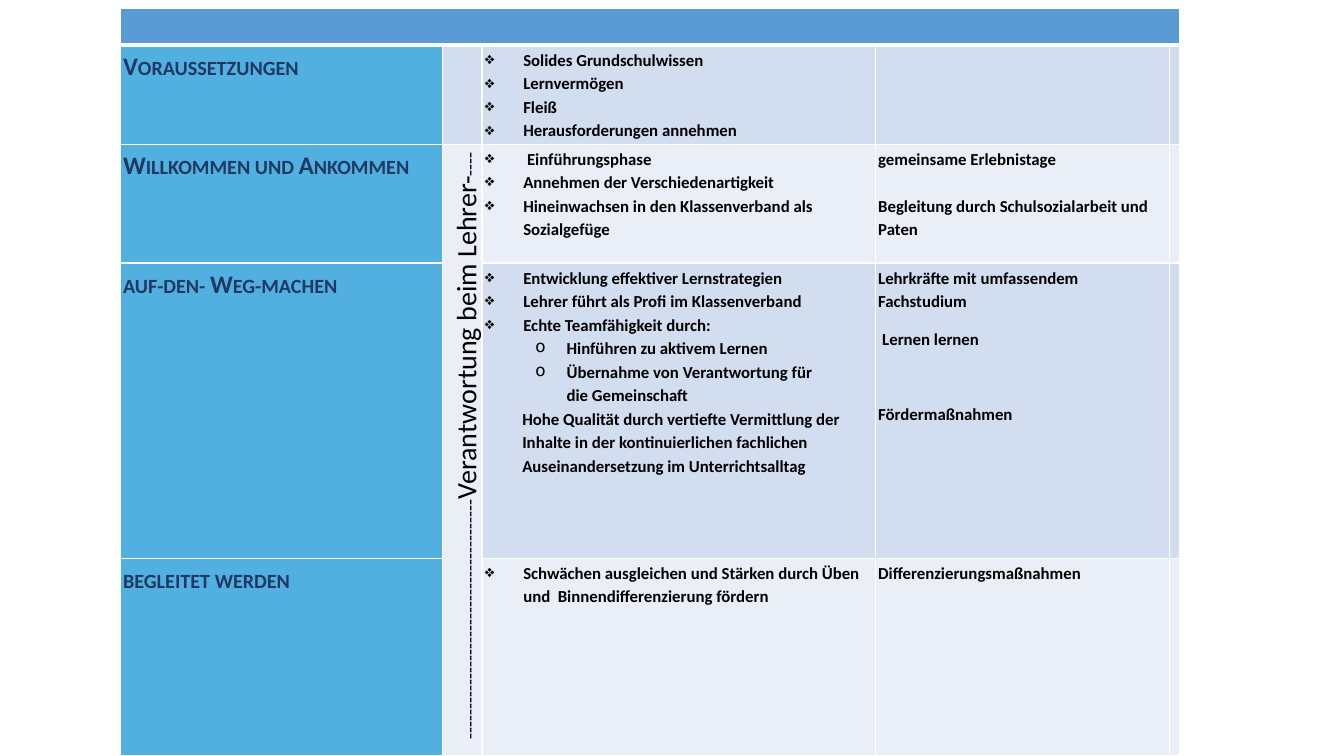
from dataclasses import dataclass

from lxml import etree
from pptx import Presentation
from pptx.dml.color import RGBColor
from pptx.enum.text import MSO_ANCHOR, PP_ALIGN
from pptx.oxml.ns import qn
from pptx.table import Table, _Cell
from pptx.text.text import TextFrame, _Paragraph
from pptx.util import Inches, Pt

BOTTOM = MSO_ANCHOR.BOTTOM
CENTER = PP_ALIGN.CENTER


@dataclass(frozen=True)
class Theme:
    """Colours, font and type sizes of the slide."""

    font: str = "Calibri"
    header: str = "5B9BD5"
    stage: str = "51B0DF"
    bands: tuple[str, str] = ("EAEFF7", "D2DEEF")
    border: str = "FFFFFF"
    heading: str = "203864"
    text: str = "000000"
    heading_size: int = 18
    body_size: int = 12
    dash_size: int = 14
    axis_size: int = 20


@dataclass(frozen=True)
class Line:
    """One paragraph of a table cell."""

    text: str
    bullet: str = ""
    indent: float = 0
    hanging: float = 0
    level: int = 0
    after: float = 10


@dataclass(frozen=True)
class Stage:
    """One row: its heading, the teaching goals and the measures."""

    heading: str
    goals: tuple[Line, ...]
    measures: tuple[Line, ...] = ()


def goal(text: str) -> Line:
    """Return a goal with a diamond bullet."""
    return Line(text, "❖", 0.38, 0.38, after=0)


def subgoal(text: str) -> Line:
    """Return a second-level goal."""
    return Line(text, "o", 0.81, 0.31, 1, 0)


THEME = Theme()
COLUMN_WIDTHS = (3.2, 0.39, 3.9, 2.92, 0.09)
ROW_HEIGHTS = (0.37, 0.98, 1.18, 2.93, 1.96)
STAGES = (
    Stage(
        "Voraussetzungen",
        (
            goal("Solides Grundschulwissen"),
            goal("Lernvermögen"),
            goal("Fleiß"),
            goal("Herausforderungen annehmen"),
        ),
    ),
    Stage(
        "Willkommen und Ankommen",
        (
            goal(" Einführungsphase"),
            goal("Annehmen der Verschiedenartigkeit"),
            goal("Hineinwachsen in den Klassenverband als Sozialgefüge"),
        ),
        (
            Line("gemeinsame Erlebnistage", after=16.8),
            Line("Begleitung durch Schulsozialarbeit und Paten"),
        ),
    ),
    Stage(
        "auf-den- Weg-machen",
        (
            goal("Entwicklung effektiver Lernstrategien"),
            goal("Lehrer führt als Profi im Klassenverband"),
            goal("Echte Teamfähigkeit durch:"),
            subgoal("Hinführen zu aktivem Lernen"),
            subgoal("Übernahme von Verantwortung für \ndie Gemeinschaft"),
            Line(
                "Hohe Qualität durch vertiefte Vermittlung der\n"
                "Inhalte in der kontinuierlichen fachlichen\n"
                "Auseinandersetzung im Unterrichtsalltag",
                indent=0.37,
            ),
        ),
        (
            Line("Lehrkräfte mit umfassendem Fachstudium"),
            Line("Lernen lernen", indent=0.04, after=36.8),
            Line("Fördermaßnahmen"),
        ),
    ),
    Stage(
        "begleitet werden",
        (goal("Schwächen ausgleichen und Stärken durch Üben und  Binnendifferenzierung fördern"),),
        (Line("Differenzierungsmaßnahmen"),),
    ),
)


def add_run(paragraph: _Paragraph, text: str, size: int, color: str, bold: bool, caps: bool = False) -> None:
    """Append a styled run."""
    run = paragraph.add_run()
    run.text = text
    run.font.name = THEME.font
    run.font.size = Pt(size)
    run.font.bold = bold
    run.font.color.rgb = RGBColor.from_string(color)
    if caps:
        run._r.get_or_add_rPr().set("cap", "small")


def format_paragraph(paragraph: _Paragraph, line: Line) -> None:
    """Set spacing, indents and bullet."""
    paragraph.line_spacing = 1.15
    paragraph.space_after = Pt(line.after)
    paragraph.level = line.level
    properties = paragraph._p.get_or_add_pPr()
    properties.set("marL", str(Inches(line.indent)))
    properties.set("indent", str(Inches(-line.hanging)))
    if line.bullet:
        etree.SubElement(properties, qn("a:buChar"), char=line.bullet)


def write_lines(frame: TextFrame, lines: tuple[Line, ...], size: int, color: str, caps: bool = False) -> None:
    """Fill a cell with bold paragraphs."""
    for number, line in enumerate(lines):
        paragraph = frame.add_paragraph() if number else frame.paragraphs[0]
        format_paragraph(paragraph, line)
        for part_number, part in enumerate(line.text.split("\n")):
            if part_number:
                paragraph.add_line_break()
            add_run(paragraph, part, size, color, True, caps)


def style_cell(cell: _Cell, row: int, column: int) -> None:
    """Set margins, borders and fill from the cell's place."""
    cell.margin_left = cell.margin_right = Inches(0.03)
    cell.margin_top, cell.margin_bottom = Inches(0.02), 0
    properties = cell._tc.get_or_add_tcPr()
    for side in "LRTB":
        thick = (row, side) in ((0, "B"), (1, "T"))
        border = etree.SubElement(properties, qn(f"a:ln{side}"), w=str(Pt(3 if thick else 1)))
        border_fill = etree.SubElement(border, qn("a:solidFill"))
        etree.SubElement(border_fill, qn("a:srgbClr"), val=THEME.border)
    if row == 0:
        color = THEME.header
    elif column == 0:
        color = THEME.stage
    else:
        color = THEME.bands[0 if column == 1 and row > 1 else row % 2]
    cell.fill.solid()
    cell.fill.fore_color.rgb = RGBColor.from_string(color)


def write_responsibility(cell: _Cell) -> None:
    """Write the upward-running responsibility label."""
    cell.vertical_anchor = BOTTOM
    cell._tc.get_or_add_tcPr().set("vert", "vert270")
    paragraph = cell.text_frame.paragraphs[0]
    format_paragraph(paragraph, Line("", indent=0.08))
    paragraph.alignment = CENTER
    for text, size in (
        ("-" * 40, THEME.dash_size),
        ("Verantwortung beim Lehrer-", THEME.axis_size),
        ("-" * 4, THEME.dash_size),
    ):
        add_run(paragraph, text, size, THEME.text, False)


def fill_table(table: Table) -> None:
    """Size, style and fill the table of stages."""
    table.first_row = table.horz_banding = False
    for column, width in enumerate(COLUMN_WIDTHS):
        table.columns[column].width = Inches(width)
    for row, height in enumerate(ROW_HEIGHTS):
        table.rows[row].height = Inches(height)
        for column in range(len(COLUMN_WIDTHS)):
            style_cell(table.cell(row, column), row, column)
    table.cell(0, 0).merge(table.cell(0, 4))
    table.cell(2, 1).merge(table.cell(4, 1))
    write_responsibility(table.cell(2, 1))
    for row, stage in enumerate(STAGES, start=1):
        heading = (Line(stage.heading),)
        write_lines(table.cell(row, 0).text_frame, heading, THEME.heading_size, THEME.heading, True)
        for column, lines in ((2, stage.goals), (3, stage.measures)):
            write_lines(table.cell(row, column).text_frame, lines, THEME.body_size, THEME.text)


def main() -> None:
    """Build and save the slide."""
    presentation = Presentation()
    presentation.slide_width, presentation.slide_height = Inches(13.33), Inches(7.5)
    slide = presentation.slides.add_slide(presentation.slide_layouts[6])
    frame = slide.shapes.add_table(
        len(ROW_HEIGHTS), len(COLUMN_WIDTHS), Inches(1.19), Inches(0.08),
        Inches(sum(COLUMN_WIDTHS)), Inches(sum(ROW_HEIGHTS)),
    )
    fill_table(frame.table)
    presentation.save("out.pptx")


if __name__ == "__main__":
    main()
